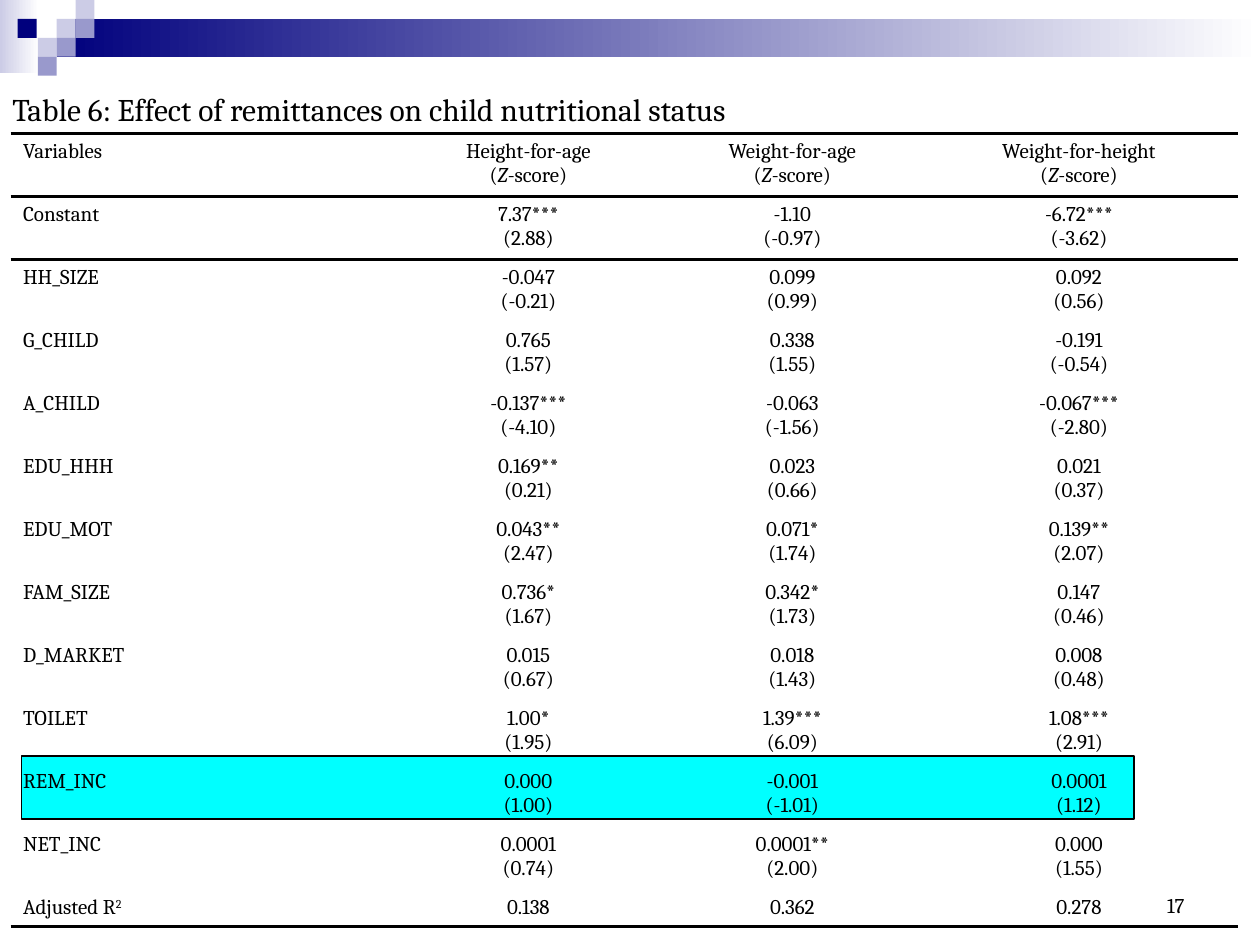
from typing import NamedTuple

from lxml.etree import SubElement
from pptx import Presentation
from pptx.dml.color import RGBColor
from pptx.enum.shapes import MSO_SHAPE
from pptx.enum.text import MSO_ANCHOR, PP_ALIGN
from pptx.oxml.ns import qn
from pptx.util import Pt

FONT = "Cambria"
BLACK, WHITE, NAVY = "000000", "FFFFFF", "00007D"
LILAC, LAVENDER, CYAN = "CCCCE6", "9999CC", "00FFFF"
NO_STYLE = "{2D5ABB26-0587-4C30-8999-92F81FD0307C}"
SQUARE = 10.8
COLUMN_WIDTHS = (218.2, 155.5, 146.2, 181.4)
ROW_HEIGHT, LAST_ROW_HEIGHT = 36, 20.3
RULE_WIDTH = 2.25


class Block(NamedTuple):
    left: float
    top: float
    width: float
    height: float
    color: str
    fade_to: str | None = None
    outline: str | None = None


class Estimate(NamedTuple):
    variable: str
    coefficients: tuple[str, str, str]
    t_values: tuple[str, str, str]


BANNER = [
    Block(0, 0, 22.3, 41.8, LILAC, fade_to=WHITE),
    Block(32.4, SQUARE, 687.6, 2 * SQUARE, NAVY, fade_to=WHITE),
] + [
    Block(left, row * SQUARE, SQUARE, SQUARE, color)
    for left, row, color in (
        (32.4, 1, LILAC), (43.2, 0, LILAC), (43.2, 1, LAVENDER), (21.6, 2, LILAC),
        (10.1, 1, NAVY), (32.4, 2, LAVENDER), (21.6, 3, LAVENDER),
    )
]
HIGHLIGHT = Block(12.2, 432, 635.8, 36, CYAN, outline=BLACK)

MEASURES = ("Height-for-age", "Weight-for-age", "Weight-for-height")
ESTIMATES = [
    Estimate("Constant", ("7.37***", "-1.10", "-6.72***"), ("2.88", "-0.97", "-3.62")),
    Estimate("HH_SIZE", ("-0.047", "0.099", "0.092"), ("-0.21", "0.99", "0.56")),
    Estimate("G_CHILD", ("0.765", "0.338", "-0.191"), ("1.57", "1.55", "-0.54")),
    Estimate("A_CHILD", ("-0.137***", "-0.063", "-0.067***"), ("-4.10", "-1.56", "-2.80")),
    Estimate("EDU_HHH", ("0.169**", "0.023", "0.021"), ("0.21", "0.66", "0.37")),
    Estimate("EDU_MOT", ("0.043**", "0.071*", "0.139**"), ("2.47", "1.74", "2.07")),
    Estimate("FAM_SIZE", ("0.736*", "0.342*", "0.147"), ("1.67", "1.73", "0.46")),
    Estimate("D_MARKET", ("0.015", "0.018", "0.008"), ("0.67", "1.43", "0.48")),
    Estimate("TOILET", ("1.00*", "1.39***", "1.08***"), ("1.95", "6.09", "2.91")),
    Estimate("REM_INC", ("0.000", "-0.001", "0.0001"), ("1.00", "-1.01", "1.12")),
    Estimate("NET_INC", ("0.0001", "0.0001**", "0.000"), ("0.74", "2.00", "1.55")),
]
ADJUSTED_R2 = ("0.138", "0.362", "0.278")


def paint(color_format, color: str) -> None:
    color_format.rgb = RGBColor.from_string(color)


def draw_block(slide, block: Block) -> None:
    shape = slide.shapes.add_shape(
        MSO_SHAPE.RECTANGLE, Pt(block.left), Pt(block.top), Pt(block.width), Pt(block.height))
    shape.shadow.inherit = False
    if block.fade_to:
        shape.fill.gradient()
        shape.fill.gradient_angle = 0
        for stop, color in zip(shape.fill.gradient_stops, (block.color, block.fade_to)):
            paint(stop.color, color)
    else:
        shape.fill.solid()
        paint(shape.fill.fore_color, block.color)
    if block.outline:
        shape.line.width = Pt(0.75)
        paint(shape.line.color, block.outline)
    else:
        shape.line.fill.background()


def style_paragraph(paragraph, size: float = 12, align=PP_ALIGN.LEFT) -> None:
    paragraph.alignment = align
    paragraph.font.name = FONT
    paragraph.font.size = Pt(size)
    paint(paragraph.font.color, BLACK)


def add_label(slide, text: str, left: float, top: float, width: float, height: float,
              size: float, align=PP_ALIGN.LEFT, anchor=MSO_ANCHOR.TOP, wrap: bool = True) -> None:
    frame = slide.shapes.add_textbox(Pt(left), Pt(top), Pt(width), Pt(height)).text_frame
    frame.word_wrap = wrap
    frame.vertical_anchor = anchor
    frame.text = text
    style_paragraph(frame.paragraphs[0], size, align)


def write_cell(cell, lines: list[list[str]], align=PP_ALIGN.CENTER) -> None:
    frame = cell.text_frame
    for index, pieces in enumerate(lines):
        paragraph = frame.add_paragraph() if index else frame.paragraphs[0]
        style_paragraph(paragraph, align=align)
        for piece in pieces:
            run = paragraph.add_run()
            run.text = piece
            if piece == "Z":
                run.font.italic = True


def rule_row(row, sides: tuple[str, ...]) -> None:
    for cell in row.cells:
        properties = cell._tc.get_or_add_tcPr()
        for position, side in enumerate(sides):
            border = properties.makeelement(qn(f"a:{side}"), {"w": str(Pt(RULE_WIDTH))})
            fill = SubElement(border, qn("a:solidFill"))
            SubElement(fill, qn("a:srgbClr"), val=BLACK)
            properties.insert(position, border)


def add_results_table(slide) -> None:
    row_count = len(ESTIMATES) + 2
    height = ROW_HEIGHT * (row_count - 1) + LAST_ROW_HEIGHT
    table = slide.shapes.add_table(
        row_count, len(COLUMN_WIDTHS), Pt(6), Pt(76.3), Pt(sum(COLUMN_WIDTHS)), Pt(height)).table
    table.first_row = table.horz_banding = False
    table._tbl.tblPr.find(qn("a:tableStyleId")).text = NO_STYLE
    for column, width in zip(table.columns, COLUMN_WIDTHS):
        column.width = Pt(width)
    for row in table.rows:
        row.height = Pt(ROW_HEIGHT)
    table.rows[row_count - 1].height = Pt(LAST_ROW_HEIGHT)

    names = [["Variables"], *([e.variable] for e in ESTIMATES), ["Adjusted R", "2"]]
    values = [
        [[[measure], ["(", "Z", "-score)"]] for measure in MEASURES],
        *([[[c], [f"({t})"]] for c, t in zip(e.coefficients, e.t_values)] for e in ESTIMATES),
        [[[value]] for value in ADJUSTED_R2],
    ]
    for row, name, row_values in zip(table.rows, names, values):
        name_cell, *value_cells = row.cells
        write_cell(name_cell, [name], PP_ALIGN.LEFT)
        for cell, lines in zip(value_cells, row_values):
            write_cell(cell, lines)
        for cell in row.cells:
            cell.fill.background()
    exponent = table.cell(row_count - 1, 0).text_frame.paragraphs[0].runs[1]
    exponent._r.get_or_add_rPr().set("baseline", "30000")

    rule_row(table.rows[0], ("lnT", "lnB"))
    rule_row(table.rows[1], ("lnT",))
    rule_row(table.rows[row_count - 1], ("lnB",))


def main() -> None:
    """Build the slide on remittances and child nutritional status."""
    presentation = Presentation()
    presentation.slide_width, presentation.slide_height = Pt(720), Pt(540)
    slide = presentation.slides.add_slide(presentation.slide_layouts[6])
    for block in [*BANNER, HIGHLIGHT]:
        draw_block(slide, block)
    add_results_table(slide)
    add_label(slide, "Table 6: Effect of remittances on child nutritional status",
              0, 48.2, 458.6, 28.8, size=18, wrap=False)
    add_label(slide, "17", 516.2, 491.8, 167.8, 36, size=12,
              align=PP_ALIGN.RIGHT, anchor=MSO_ANCHOR.BOTTOM)
    presentation.save("out.pptx")


if __name__ == "__main__":
    main()
